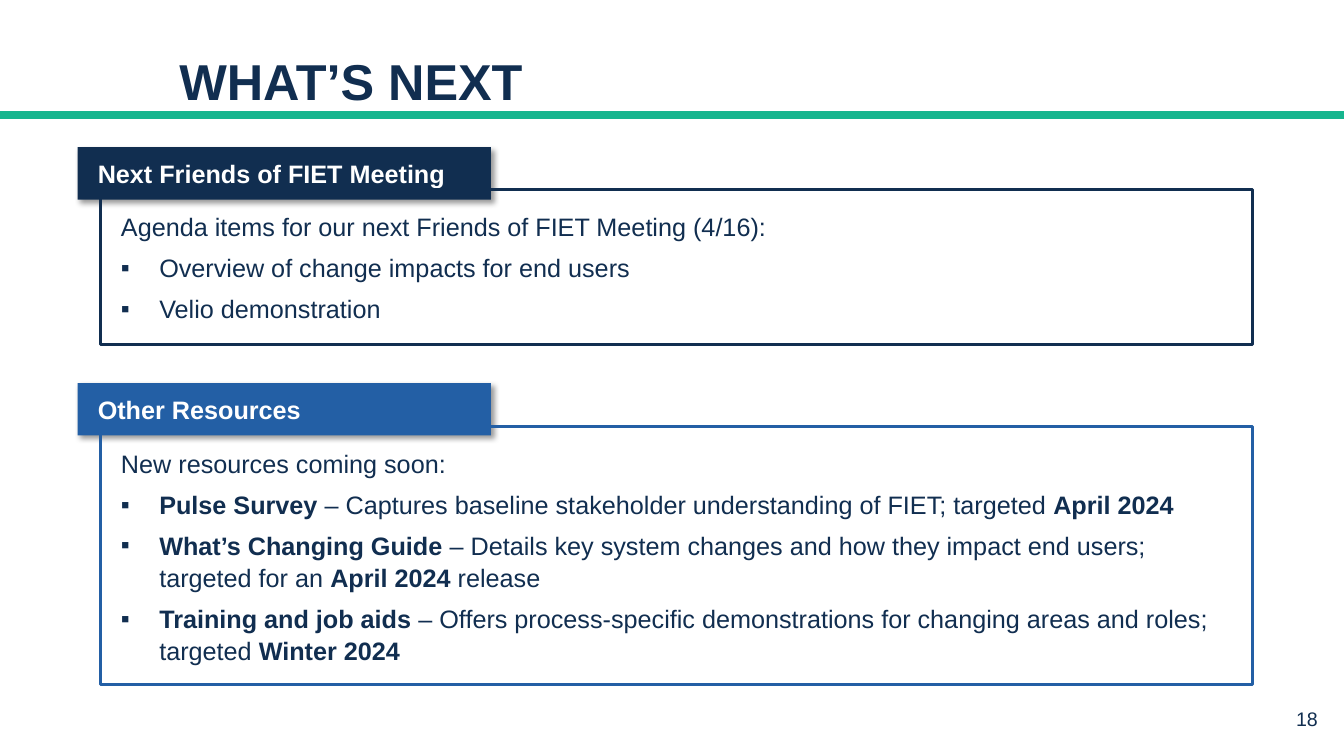
from lxml import etree
from pptx import Presentation
from pptx.dml.color import RGBColor
from pptx.enum import shapes, text
from pptx.oxml import ns
from pptx.util import Inches, Pt

NAVY = RGBColor(0x11, 0x2E, 0x50)
BLUE = RGBColor(0x23, 0x5F, 0xA5)
GREEN = RGBColor(0x16, 0xB5, 0x8E)
WHITE = RGBColor(0xFF, 0xFF, 0xFF)

MEETING = [
    [("Overview of change impacts for end users", False)],
    [("Velio demonstration", False)],
]
RESOURCES = [
    [("Pulse Survey ", True),
     ("– Captures baseline stakeholder understanding of FIET; targeted ", False),
     ("April 2024", True)],
    [("What’s Changing Guide", True),
     (" – Details key system changes and how they impact end users; "
      "targeted for an ", False),
     ("April 2024", True), (" release", False)],
    [("Training and job aids ", True),
     ("– Offers process-specific demonstrations for changing areas and roles; "
      "targeted ", False),
     ("Winter 2024", True)],
]


def add_xml(parent, tag, **attrs):
    return etree.SubElement(parent, ns.qn(tag), attrs)


def set_frame(shape, anchor, insets):
    frame = shape.text_frame
    frame.word_wrap = True
    frame.vertical_anchor = anchor
    (frame.margin_left, frame.margin_top,
     frame.margin_right, frame.margin_bottom) = map(Inches, insets)
    return frame


def add_run(para, words, size, color, bold=False):
    run = para.add_run()
    run.text = words
    font = run.font
    font.name, font.size, font.bold = "Arial", Pt(size), bold
    font.color.rgb = color


def add_label(slide, area, words, size, bold, align, anchor):
    box = slide.shapes.add_textbox(*map(Inches, area))
    para = set_frame(box, anchor, (0.1, 0.05, 0.1, 0.05)).paragraphs[0]
    para.alignment = align
    add_run(para, words, size, NAVY, bold)
    return para


def add_rule(slide, top):
    rule = slide.shapes.add_connector(
        shapes.MSO_CONNECTOR.STRAIGHT, 0, Inches(top), Inches(13.33), Inches(top))
    rule.line.color.rgb = GREEN
    rule.line.width = Pt(6)
    add_xml(rule._element.spPr, "a:effectLst")


def add_rect(slide, *area):
    rect = slide.shapes.add_shape(
        shapes.MSO_SHAPE.RECTANGLE, *map(Inches, area))
    rect.shadow.inherit = False
    return rect


def cast_shadow(shape):
    effects = shape._element.spPr.find(ns.qn("a:effectLst"))
    shadow = add_xml(effects, "a:outerShdw", blurRad=str(Pt(4)), dist=str(Pt(3)),
                     dir="2700000", algn="tl", rotWithShape="0")
    color = add_xml(shadow, "a:srgbClr", val="000000")
    add_xml(color, "a:alpha", val="40000")


def add_tab(slide, top, words, color):
    tab = add_rect(slide, 0.77, top, 4.1, 0.52)
    tab.fill.solid()
    tab.fill.fore_color.rgb = color
    tab.line.fill.background()
    cast_shadow(tab)
    frame = set_frame(tab, text.MSO_ANCHOR.MIDDLE, (0.2, 0.05, 0.1, 0.05))
    para = frame.paragraphs[0]
    para.alignment = text.PP_ALIGN.LEFT
    add_run(para, words, 18, WHITE, True)


def set_bullet(para):
    props = para._p.get_or_add_pPr()
    props.set("marL", str(Inches(0.38)))
    props.set("indent", str(-Inches(0.38)))
    add_xml(props, "a:buFont", typeface="Arial")
    add_xml(props, "a:buChar", char="▪")


def add_panel(slide, top, height, color, intro, items):
    panel = add_rect(slide, 1, top, 11.42, height)
    panel.fill.background()
    panel.line.color.rgb = color
    panel.line.width = Pt(2.25)
    frame = set_frame(panel, text.MSO_ANCHOR.TOP, (0.2, 0.2, 0.1, 0.1))
    for i, parts in enumerate([[(intro, False)], *items]):
        para = frame.add_paragraph() if i else frame.paragraphs[0]
        if i:
            set_bullet(para)
        para.alignment = text.PP_ALIGN.LEFT
        para.line_spacing = 1.07
        para.space_after = Pt(6)
        for words, bold in parts:
            add_run(para, words, 18, NAVY, bold)


def main():
    deck = Presentation()
    deck.slide_width, deck.slide_height = Inches(13.33), Inches(7.5)
    slide = deck.slides.add_slide(deck.slide_layouts[6])
    add_label(slide, (12.53, 6.96, 0.64, 0.39), "18", 14, False,
              text.PP_ALIGN.RIGHT, text.MSO_ANCHOR.TOP)
    add_rule(slide, 1.14)
    title = add_label(slide, (1.68, 0.39, 9.95, 0.76), "WHAT’S NEXT", 36, True,
                      text.PP_ALIGN.LEFT, text.MSO_ANCHOR.BOTTOM)
    title.line_spacing = 0.9
    add_tab(slide, 1.46, "Next Friends of FIET Meeting", NAVY)
    add_panel(slide, 1.88, 1.54, NAVY,
              "Agenda items for our next Friends of FIET Meeting (4/16):", MEETING)
    add_tab(slide, 3.8, "Other Resources", BLUE)
    add_panel(slide, 4.23, 2.56, BLUE, "New resources coming soon:", RESOURCES)
    deck.save("out.pptx")


if __name__ == "__main__":
    main()
